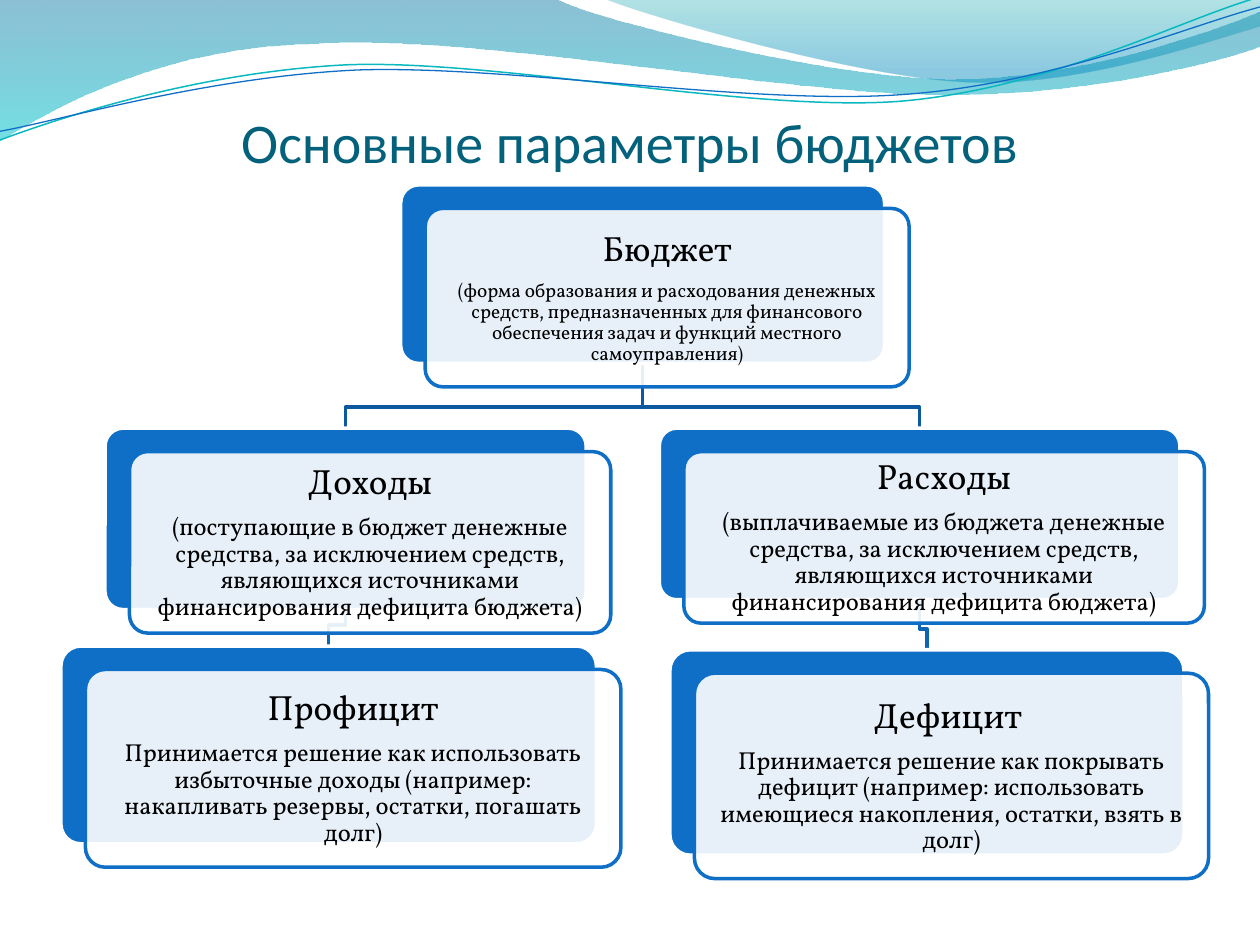
from dataclasses import dataclass

from lxml.etree import SubElement
from pptx import Presentation
from pptx.dml.color import RGBColor as Color
from pptx.enum.shapes import MSO_SHAPE as Shape
from pptx.enum.text import MSO_ANCHOR as Anchor, PP_ALIGN as Align
from pptx.oxml.ns import qn
from pptx.util import Pt


@dataclass(frozen=True)
class Theme:
    title: str = "04617B"
    blue: str = "0F6FC6"
    teal: str = "0AB8BF"
    white: str = "FFFFFF"
    black: str = "000000"
    upper_link: str = "0C599F"
    lower_link: str = "0E65B4"
    band: tuple = ((0, "0074A1", 45), (1, "00C6CF", 55))
    fold: tuple = ((0, "00A1A9", 30), (0.8, "008BBF", 45))
    title_font: str = "Calibri"
    body_font: str = "Vollkorn"
    title_size: float = 32
    heading_size: float = 20
    body_size: float = 14
    small_size: float = 11


THEME = Theme()
CARD_OFFSET = (14, 13.4)
CARD_TEXT_INSET = 3.2
BEND_ABOVE_CHILD = 12

BAND = [(0, 0), (317, -1), (343, 12, 478, 45, 546, 45), (614, 45, 690, 19, 720, 6.5),
        (721, 26), (708, 32, 626, 55, 537, 54), (448, 54, 275, 20, 185, 24.5),
        (93, 26, 33, 60, -1, 81), (0, 0)]
FOLD = [(345, -1), (366, 8, 491, 45, 554, 47), (616, 50, 692, 23, 720, 15), (720, 0),
        (345, -1)]
TEAL_WAVE = [(0, 80), (35, 67, 114, 41, 199, 37), (284, 34, 427, 64, 513, 58),
             (600, 51, 675, 11, 719, -1.5)]
BLUE_WAVE = [(0, 75), (34, 69, 118, 44, 204, 40), (290, 37, 430, 60.5, 516, 54),
             (602, 48, 678, 15, 720, 4)]

CARDS = {
    "Бюджет": ((229, 105.7, 276.5, 102), THEME.small_size,
               "(форма образования и расходования денежных средств, предназначенных "
               "для финансового обеспечения задач и функций местного самоуправления)"),
    "Доходы": ((60, 244.7, 275, 103.7), THEME.body_size,
               "(поступающие в бюджет денежные средства, за исключением средств, "
               "являющихся источниками финансирования дефицита бюджета)"),
    "Профицит": ((34.8, 369.2, 306, 113), THEME.body_size,
                 "Принимается решение как использовать избыточные доходы "
                 "(например: накапливать резервы, остатки, погашать долг)"),
    "Расходы": ((376.8, 244.7, 297.4, 98), THEME.body_size,
                "(выплачиваемые из бюджета денежные средства, за исключением средств, "
                "являющихся источниками финансирования дефицита бюджета)"),
    "Дефицит ": ((382.8, 371.3, 293.8, 117.4), THEME.body_size,
                 "Принимается решение как покрывать дефицит (например: использовать "
                 "имеющиеся накопления, остатки, взять в долг)"),
}
LINKS = [("Расходы", "Дефицит ", THEME.lower_link),
         ("Бюджет", "Расходы", THEME.upper_link),
         ("Доходы", "Профицит", THEME.lower_link),
         ("Бюджет", "Доходы", THEME.upper_link)]


def rgb(value):
    return Color.from_string(value)


def set_opacity(shape, percentages):
    colors = shape.element.spPr.iter(qn("a:srgbClr"))
    for color, percentage in zip(colors, percentages):
        SubElement(color, qn("a:alpha")).set("val", str(percentage * 1000))


def set_line(shape, color, width):
    shape.line.color.rgb = rgb(color)
    shape.line.width = Pt(width)


def bend_segments(shape, outline):
    lines = iter(list(shape.element.spPr.iter(qn("a:lnTo"))))
    for segment in outline[1:]:
        first = next(lines)
        if len(segment) == 6:
            first.tag = qn("a:cubicBezTo")
            for line in (next(lines), next(lines)):
                first.append(line[0])
                line.getparent().remove(line)


def add_outline(slide, outline, closed=False):
    points = [(Pt(segment[i]), Pt(segment[i + 1]))
              for segment in outline for i in range(0, len(segment), 2)]
    builder = slide.shapes.build_freeform(*points[0])
    builder.add_line_segments(points[1:], close=closed)
    shape = builder.convert_to_shape()
    shape.shadow.inherit = False
    bend_segments(shape, outline)
    return shape


def add_gradient_band(slide, outline, stops):
    shape = add_outline(slide, outline, closed=True)
    shape.fill.gradient()
    shape.fill.gradient_angle = 270
    for target, (position, color, _) in zip(shape.fill.gradient_stops, stops):
        target.position = position
        target.color.rgb = rgb(color)
    set_opacity(shape, [opacity for *_, opacity in stops])
    shape.line.fill.background()


def add_stroke(slide, outline, color, width):
    shape = add_outline(slide, outline)
    shape.fill.background()
    set_line(shape, color, width)


def add_link(slide, parent, child, color):
    left, top, width, height = parent
    start = left + width / 2
    end = child[0] + child[2] / 2
    bend = child[1] - BEND_ABOVE_CHILD
    add_stroke(slide, [(start, top + height), (start, bend), (end, bend), (end, child[1])],
               color, 2)


def write_text(paragraph, text, *, size, font, color, line_spacing=None, space_after=0):
    paragraph.alignment = Align.CENTER
    paragraph.line_spacing = line_spacing
    paragraph.space_after = Pt(space_after)
    run = paragraph.add_run()
    run.text = text
    run.font.size = Pt(size)
    run.font.name = font
    run.font.color.rgb = rgb(color)


def add_text_frame(slide, box, anchor, insets):
    frame = slide.shapes.add_textbox(*map(Pt, box)).text_frame
    frame.word_wrap = True
    frame.vertical_anchor = anchor
    frame.margin_left, frame.margin_top, frame.margin_right, frame.margin_bottom = map(Pt, insets)
    return frame


def add_panel(slide, box, fill, line):
    shape = slide.shapes.add_shape(Shape.ROUNDED_RECTANGLE, *map(Pt, box))
    shape.shadow.inherit = False
    shape.adjustments[0] = 0.1
    shape.fill.solid()
    shape.fill.fore_color.rgb = rgb(fill)
    set_line(shape, line, 2)
    return shape


def add_card(slide, box, heading, body, body_size):
    add_panel(slide, box, THEME.blue, THEME.white)
    left, top = box[0] + CARD_OFFSET[0], box[1] + CARD_OFFSET[1]
    width, height = box[2:]
    front = add_panel(slide, (left, top, width, height), THEME.white, THEME.blue)
    set_opacity(front, [90])
    inset = CARD_TEXT_INSET
    text_box = (left + inset, top + inset, width - 2 * inset, height - 2 * inset)
    frame = add_text_frame(slide, text_box, Anchor.MIDDLE, (6, 6, 6, 6))
    paragraphs = (frame.paragraphs[0], frame.add_paragraph())
    texts = ((heading, THEME.heading_size), (body, body_size))
    for paragraph, (text, size) in zip(paragraphs, texts):
        write_text(paragraph, text, size=size, font=THEME.body_font, color=THEME.black,
                   line_spacing=0.9, space_after=0.35 * size)


def add_title(slide, text):
    frame = add_text_frame(slide, (36, 43, 648, 57), Anchor.BOTTOM, (0, 3.6, 0, 0))
    write_text(frame.paragraphs[0], text, size=THEME.title_size,
               font=THEME.title_font, color=THEME.title)


def main():
    presentation = Presentation()
    presentation.slide_width, presentation.slide_height = Pt(720), Pt(540)
    slide = presentation.slides.add_slide(presentation.slide_layouts[6])
    add_gradient_band(slide, BAND, THEME.band)
    add_gradient_band(slide, FOLD, THEME.fold)
    add_stroke(slide, TEAL_WAVE, THEME.teal, 0.85)
    add_stroke(slide, BLUE_WAVE, THEME.blue, 0.75)
    add_title(slide, "Основные параметры бюджетов")
    for parent, child, color in LINKS:
        add_link(slide, CARDS[parent][0], CARDS[child][0], color)
    for heading, (box, body_size, body) in CARDS.items():
        add_card(slide, box, heading, body, body_size)
    presentation.save("out.pptx")


if __name__ == "__main__":
    main()
